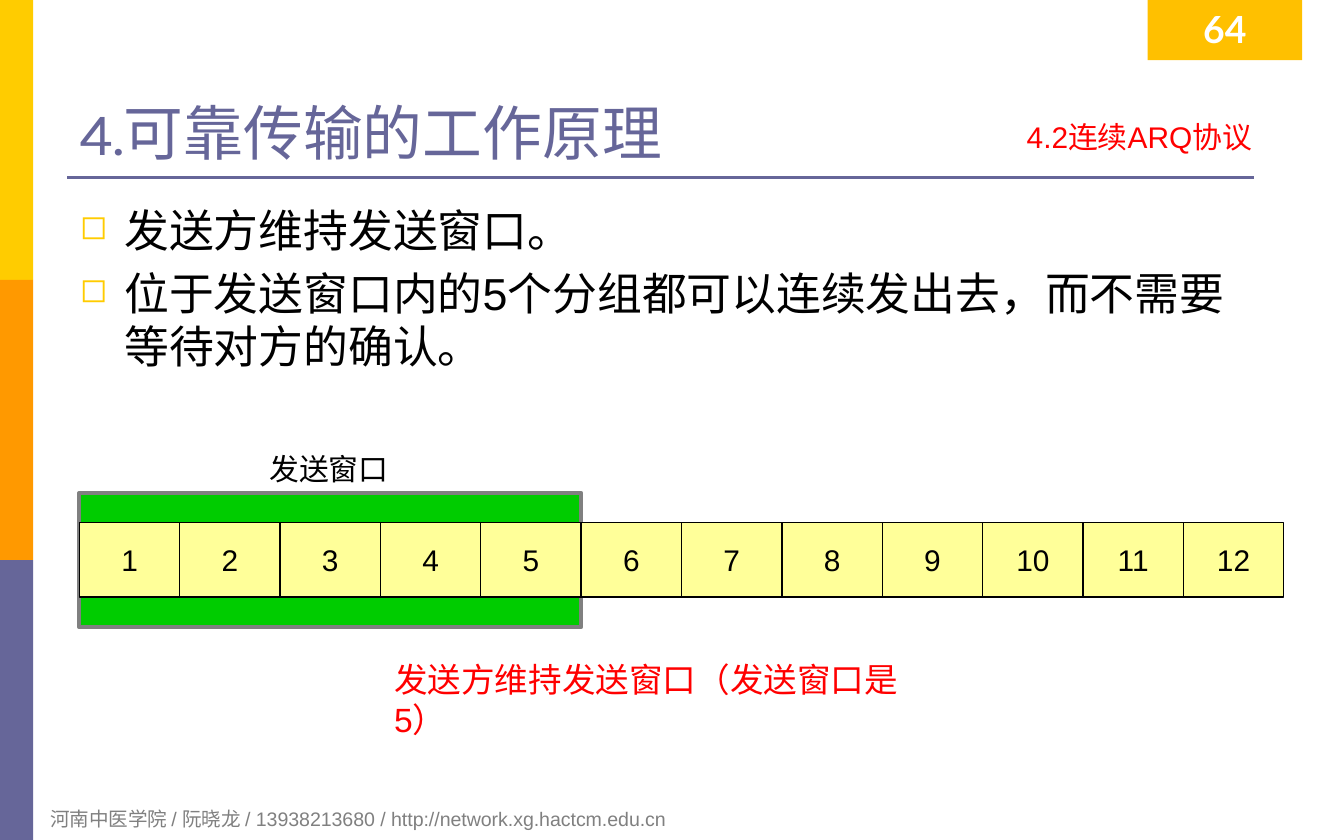
from lxml import etree
from pptx import Presentation
from pptx.dml.color import RGBColor
from pptx.enum.shapes import MSO_CONNECTOR, MSO_SHAPE
from pptx.enum.text import MSO_ANCHOR, MSO_AUTO_SIZE, PP_ALIGN
from pptx.oxml.ns import qn
from pptx.util import Cm, Pt

RECTANGLE, STRAIGHT = MSO_SHAPE.RECTANGLE, MSO_CONNECTOR.STRAIGHT
LEFT, CENTER, RIGHT = PP_ALIGN.LEFT, PP_ALIGN.CENTER, PP_ALIGN.RIGHT
TOP, MIDDLE, BOTTOM = MSO_ANCHOR.TOP, MSO_ANCHOR.MIDDLE, MSO_ANCHOR.BOTTOM
NO_AUTOFIT = MSO_AUTO_SIZE.NONE

YELLOW = RGBColor(0xFF, 0xCC, 0x00)
ORANGE = RGBColor(0xFF, 0x99, 0x00)
PURPLE = RGBColor(0x66, 0x66, 0x99)
AMBER = RGBColor(0xFF, 0xC0, 0x00)
GREEN = RGBColor(0x00, 0xCC, 0x00)
PALE_YELLOW = RGBColor(0xFF, 0xFF, 0x99)
GREY = RGBColor(0x80, 0x80, 0x80)
RED = RGBColor(0xFF, 0x00, 0x00)
BLACK = RGBColor(0x00, 0x00, 0x00)
WHITE = RGBColor(0xFF, 0xFF, 0xFF)

deck = Presentation()
deck.slide_width, deck.slide_height = Cm(25.4), Cm(15.88)
page = deck.slides.add_slide(deck.slide_layouts[5])


def add_rectangle(left, top, width, height, fill, line=None, weight=0.75):
    box = page.shapes.add_shape(RECTANGLE, Cm(left), Cm(top), Cm(width), Cm(height))
    box.shadow.inherit = False
    box.fill.solid()
    box.fill.fore_color.rgb = fill
    if line is None:
        box.line.fill.background()
    else:
        box.line.color.rgb = line
        box.line.width = Pt(weight)
    return box


def write(box, lines, size, color, font="Arial", align=LEFT, anchor=TOP):
    """Fill a box with one paragraph per line and format its runs."""
    frame = box.text_frame
    frame.text = "\n".join(lines)
    frame.word_wrap = True
    frame.auto_size = NO_AUTOFIT
    frame.vertical_anchor = anchor
    frame.margin_left = frame.margin_right = Cm(0.24)
    frame.margin_top = frame.margin_bottom = Cm(0.12)
    for para in frame.paragraphs:
        para.alignment = align
        for span in para.runs:
            span.font.name = font
            span.font.size = Pt(size)
            span.font.color.rgb = color


# Side stripes
stripe_height = 15.88 / 3
for index, color in enumerate([YELLOW, ORANGE, PURPLE]):
    add_rectangle(0, index * stripe_height, 0.63, stripe_height, color)

# Title and page number
title = page.shapes.title
title.left, title.top, title.width, title.height = Cm(1.27), Cm(0.64), Cm(22.86), Cm(2.64)
write(title, ["4.可靠传输的工作原理"], 32, PURPLE, font="Karla", anchor=BOTTOM)

badge = add_rectangle(21.69, 0, 2.92, 1.14, AMBER)
write(badge, ["64"], 20, WHITE, font="Lato", align=CENTER)
badge.text_frame.paragraphs[0].runs[0].font.bold = True

# Bulleted text
body = page.shapes.add_textbox(Cm(1.27), Cm(3.71), Cm(22.86), Cm(10.49))
write(body, ["发送方维持发送窗口。",
             "位于发送窗口内的5个分组都可以连续发出去，而不需要等待对方的确认。"], 24, BLACK)
for index, para in enumerate(body.text_frame.paragraphs):
    if index:
        para.space_before = Pt(4.8)
    properties = para._p.get_or_add_pPr()
    properties.set("marL", str(Cm(0.84)))
    properties.set("indent", str(Cm(-0.84)))
    bullet_color = etree.SubElement(properties, qn("a:buClr"))
    etree.SubElement(bullet_color, qn("a:srgbClr"), val=str(YELLOW))
    etree.SubElement(properties, qn("a:buSzPct"), val="75000")
    etree.SubElement(properties, qn("a:buChar"), char="◻")

# Send window behind the row of numbered packets
packet_count, window_size = 12, 5
row_left, row_top, row_width, row_height = 1.5, 9.88, 22.76, 1.41
packet_width = row_width / packet_count
add_rectangle(row_left, 9.32, window_size * packet_width, 2.54, GREEN, GREY, 2.25)
add_rectangle(row_left, row_top, row_width, row_height, PALE_YELLOW, BLACK)

rules = [(1.27, 3.35, 23.7, 3.35, PURPLE, 1.5)]
for index in range(packet_count):
    left = row_left + index * packet_width
    number = page.shapes.add_textbox(Cm(left), Cm(row_top), Cm(packet_width), Cm(row_height))
    write(number, [str(index + 1)], 16, BLACK, align=CENTER, anchor=MIDDLE)
    if index:
        rules.append((left, row_top, left, row_top + row_height, BLACK, 0.75))

# Title rule and packet dividers
for x1, y1, x2, y2, color, weight in rules:
    rule = page.shapes.add_connector(STRAIGHT, Cm(x1), Cm(y1), Cm(x2), Cm(y2))
    rule.line.color.rgb = color
    rule.line.width = Pt(weight)
    etree.SubElement(rule._element.spPr, qn("a:effectLst"))

# Labels: left, top, width, height, text, size, colour, alignment
labels = [
    (15.9, 2.13, 8, 0.99, "4.2连续ARQ协议", 16, RED, RIGHT),
    (4.85, 8.41, 2.8, 0.94, "发送窗口", 16, BLACK, LEFT),
    (7.21, 12.34, 10.9, 1.02, "发送方维持发送窗口（发送窗口是 5）", 18, RED, LEFT),
    (0.71, 15.14, 17.2, 0.71,
     "河南中医学院 / 阮晓龙 / 13938213680 / http://network.xg.hactcm.edu.cn", 10.5, GREY, LEFT),
]
for left, top, width, height, text, size, color, align in labels:
    label = page.shapes.add_textbox(Cm(left), Cm(top), Cm(width), Cm(height))
    write(label, [text], size, color, align=align)

deck.save("out.pptx")
